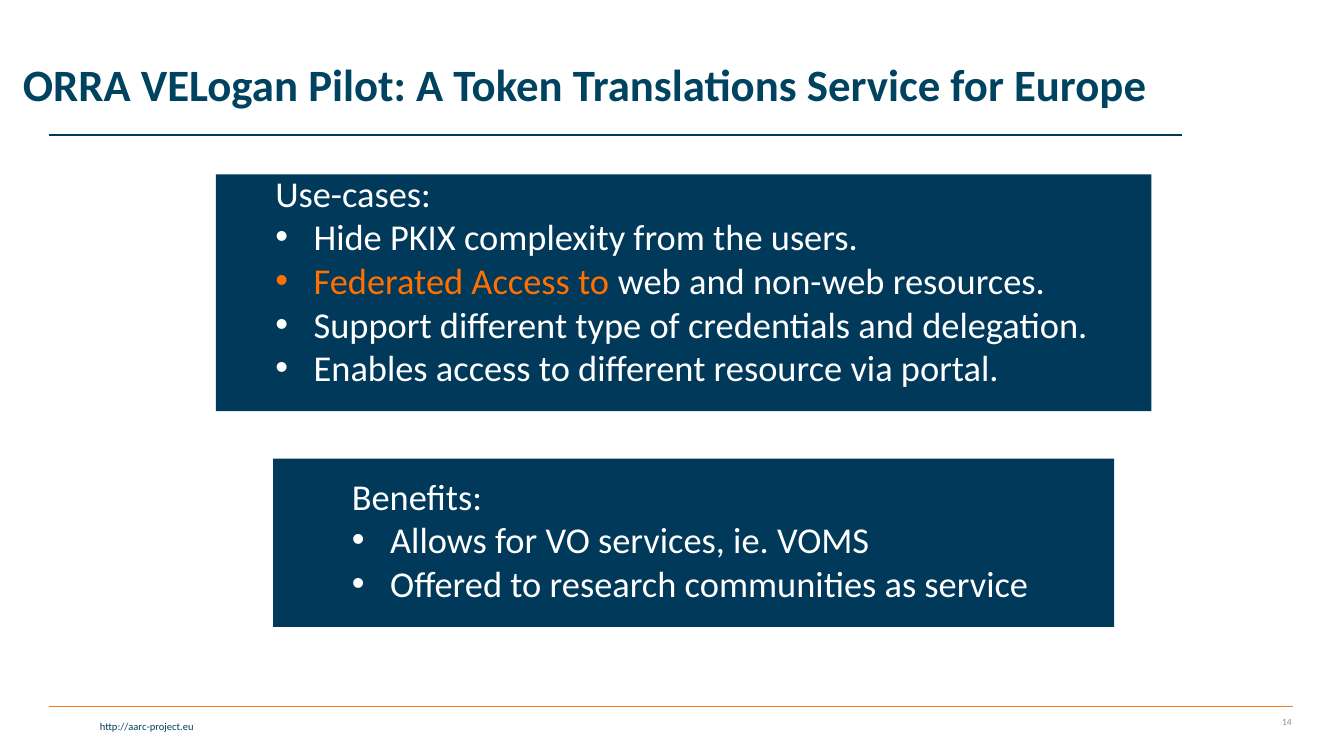
from typing import NamedTuple

from lxml.etree import SubElement
from pptx import Presentation
from pptx.dml.color import RGBColor
from pptx.enum.shapes import MSO_CONNECTOR as Link
from pptx.enum.text import MSO_ANCHOR as Anchor, MSO_AUTO_SIZE as Fit, PP_ALIGN as Align
from pptx.oxml.ns import qn
from pptx.util import Inches, Pt

NAVY, WHITE, ORANGE = "003959", "FFFFFF", "FF7000"
HANG = Inches(0.38)


class Run(NamedTuple):
    text: str
    color: str = WHITE


class Panel(NamedTuple):
    left: float
    top: float
    width: float
    height: float
    inset: float
    head: str
    items: list[list[Run]]


class Rule(NamedTuple):
    left: float
    right: float
    y: float
    color: str


class Note(NamedTuple):
    left: float
    top: float
    width: float
    height: float
    text: str
    size: float
    color: str
    anchor: Anchor


PANELS = [
    Panel(2.14, 1.73, 9.28, 2.35, 0.59, "Use-cases:", [
        [Run("Hide PKIX complexity from the users.")],
        [Run("Federated Access to ", ORANGE), Run("web and non-web resources.")],
        [Run("Support different type of credentials and delegation.")],
        [Run("Enables access to different resource via portal.")],
    ]),
    Panel(2.71, 4.55, 8.34, 1.67, 0.78, "Benefits:", [
        [Run("Allows for VO services, ie. VOMS")],
        [Run("Offered to research communities as service")],
    ]),
]
RULES = [Rule(0.49, 12.82, 7.01, "F57B20"), Rule(0.49, 11.72, 1.34, NAVY)]
NOTES = [
    Note(0.03, 7.09, 1.99, 0.23, "http://aarc-project.eu", 7.5, "003F5E", Anchor.TOP),
    Note(12.1, 7.01, 0.81, 0.3, "14", 6.8, "8C8C8C", Anchor.MIDDLE),
]


def rgb(color: str) -> RGBColor:
    return RGBColor.from_string(color)


def place(shape, left: float, top: float, width: float, height: float) -> None:
    shape.left, shape.top = Inches(left), Inches(top)
    shape.width, shape.height = Inches(width), Inches(height)


def add_run(para, text: str, size: float, color: str, bold: bool = False) -> None:
    run = para.add_run()
    run.text = text
    font = run.font
    font.name, font.size, font.bold = "Calibri", Pt(size), bold
    font.color.rgb = rgb(color)


def set_bullet(para, shown: bool) -> None:
    props = para._p.get_or_add_pPr()
    props.set("marL", str(HANG if shown else 0))
    props.set("indent", str(-HANG if shown else 0))
    if shown:
        SubElement(props, qn("a:buFont")).set("typeface", "Arial")
        SubElement(props, qn("a:buChar")).set("char", "•")
    else:
        SubElement(props, qn("a:buNone"))


def fill_panel(body, panel: Panel) -> None:
    place(body, panel.left, panel.top, panel.width, panel.height)
    body.fill.solid()
    body.fill.fore_color.rgb = rgb(NAVY)
    frame = body.text_frame
    frame.auto_size, frame.word_wrap = Fit.NONE, True
    frame.vertical_anchor = Anchor.BOTTOM
    frame.margin_left = Inches(panel.inset)
    frame.margin_top = frame.margin_right = frame.margin_bottom = Inches(0.22)
    for i, runs in enumerate([[Run(panel.head)], *panel.items]):
        para = frame.add_paragraph() if i else frame.paragraphs[0]
        para.space_before = Pt(0)
        set_bullet(para, i > 0)
        for run in runs:
            add_run(para, run.text, 26, run.color)


def add_rule(slide, rule: Rule) -> None:
    y = Inches(rule.y)
    line = slide.shapes.add_connector(
        Link.STRAIGHT, Inches(rule.left), y, Inches(rule.right), y)
    line.line.width = Pt(1)
    line.line.color.rgb = rgb(rule.color)
    SubElement(line._element.spPr, qn("a:effectLst"))


def add_note(slide, note: Note) -> None:
    box = slide.shapes.add_textbox(0, 0, 0, 0)
    place(box, note.left, note.top, note.width, note.height)
    frame = box.text_frame
    frame.word_wrap, frame.vertical_anchor = True, note.anchor
    para = frame.paragraphs[0]
    para.alignment = Align.RIGHT
    add_run(para, note.text, note.size, note.color)


def set_title(title) -> None:
    place(title, 0.05, 0.14, 11.51, 1.45)
    frame = title.text_frame
    frame.auto_size, frame.vertical_anchor = Fit.NONE, Anchor.MIDDLE
    para = frame.paragraphs[0]
    para.alignment, para.line_spacing = Align.CENTER, 0.9
    add_run(para, "ORRA VELogan Pilot: A Token Translations Service for Europe",
            32, "004361", True)


def main() -> None:
    deck = Presentation()
    deck.slide_width, deck.slide_height = Inches(13.33), Inches(7.5)
    two_lists = deck.slide_layouts[3]
    slide = deck.slides.add_slide(two_lists)
    title, *bodies = slide.placeholders
    set_title(title)
    for body, panel in zip(bodies, PANELS):
        fill_panel(body, panel)
    for rule in RULES:
        add_rule(slide, rule)
    for note in NOTES:
        add_note(slide, note)
    deck.save("out.pptx")


if __name__ == "__main__":
    main()
